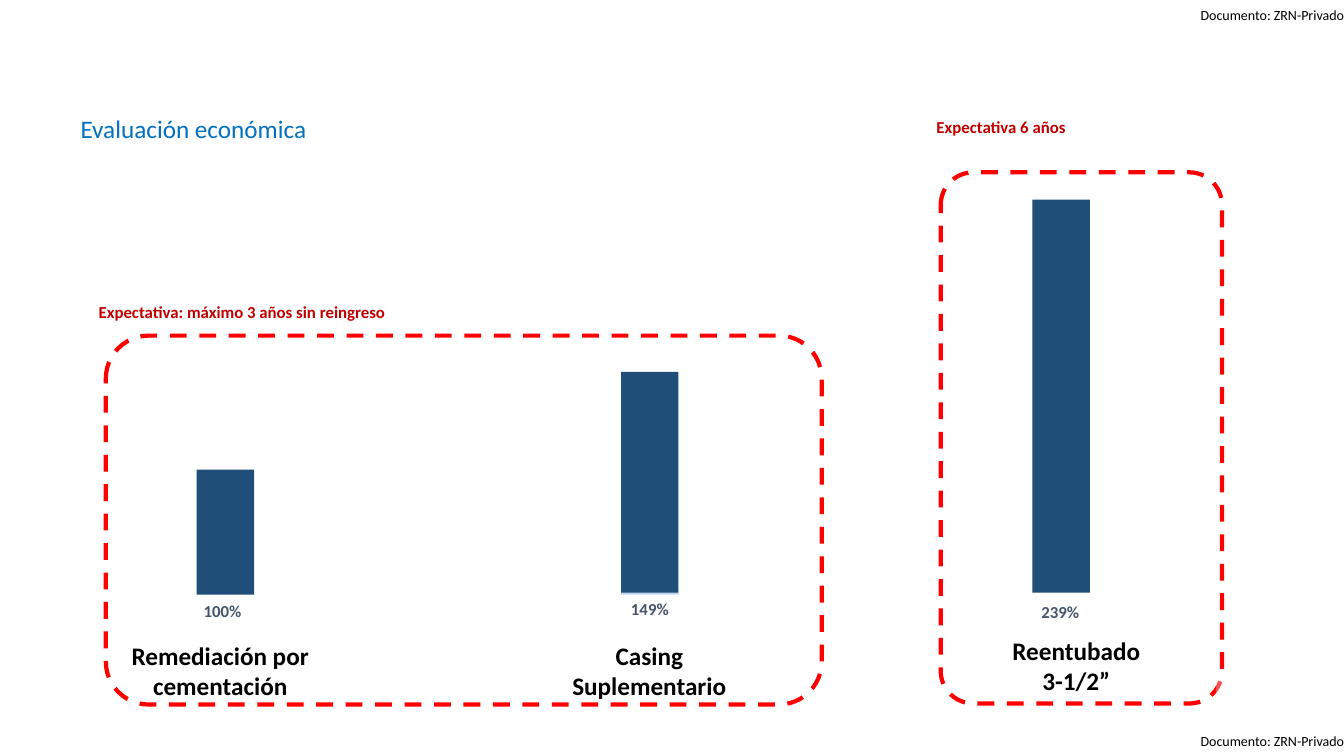
from dataclasses import dataclass

from lxml import etree
from pptx import Presentation
from pptx import util as u
from pptx.dml.color import RGBColor
from pptx.enum import dml, shapes, text
from pptx.oxml import ns

PX = 9144  # 100 px to the inch


@dataclass(frozen=True)
class Theme:
    font: str = "Calibri"
    marking_size: int = 10
    note_size: int = 12
    heading_size: int = 18
    ink: str = "000000"
    title: str = "0070C0"
    value: str = "44546A"
    note: str = "C00000"
    bar: str = "1F4E79"
    bar_base: str = "BDD7EE"
    frame: str = "FF0000"
    paper: str = "FFFFFF"


@dataclass(frozen=True)
class Area:
    left: int
    top: int
    width: int
    height: int

    def emu(self) -> list[int]:
        return [n * PX for n in (self.left, self.top, self.width, self.height)]


@dataclass(frozen=True)
class Label:
    area: Area
    lines: tuple[str, ...]
    size: int
    colour: str
    bold: bool = True
    align: text.PP_ALIGN = text.PP_ALIGN.LEFT
    wrap: bool = False
    spacing: float = 1.0
    inset: bool = True
    anchor: text.MSO_ANCHOR = text.MSO_ANCHOR.TOP


@dataclass(frozen=True)
class Option:
    """One alternative: its bar, its percentage and its name."""
    bar: Area
    percent: str
    percent_at: Area
    name: tuple[str, ...]
    name_at: Area


@dataclass(frozen=True)
class Expectation:
    """A dashed frame around options, with the note above it."""
    frame: Area
    note: str
    note_at: Area


THEME = Theme()
BAR_WIDTH = 57
MARKING = "Documento: ZRN-Privado"

OPTIONS = [
    Option(Area(195, 466, BAR_WIDTH, 124), "100%", Area(192, 591, 58, 30),
           ("Remediación por", "cementación"), Area(120, 630, 197, 71)),
    Option(Area(616, 369, BAR_WIDTH, 219), "149%", Area(616, 589, 58, 30),
           ("Casing", "Suplementario"), Area(557, 630, 174, 71)),
    Option(Area(1024, 198, BAR_WIDTH, 390), "239%", Area(1023, 592, 58, 30),
           ("Reentubado", "3-1/2”"), Area(990, 625, 155, 71)),
]
EXPECTATIONS = [
    Expectation(Area(105, 333, 710, 366), "Expectativa: máximo 3 años sin reingreso",
                Area(88, 294, 308, 30)),
    Expectation(Area(933, 171, 279, 527), "Expectativa 6 años",
                Area(919, 111, 150, 50)),
]


def add_label(page, label: Label) -> None:
    box = page.shapes.add_textbox(*label.area.emu())
    frame = box.text_frame
    frame.word_wrap = label.wrap
    frame.vertical_anchor = label.anchor
    if not label.inset:
        frame.margin_left = frame.margin_right = 0
        frame.margin_top = frame.margin_bottom = 0
    for index, line in enumerate(label.lines):
        para = frame.add_paragraph() if index else frame.paragraphs[0]
        para.alignment = label.align
        para.line_spacing = label.spacing
        span = para.add_run()
        span.text = line
        span.font.name = THEME.font
        span.font.size = u.Pt(label.size)
        span.font.bold = label.bold
        span.font.color.rgb = RGBColor.from_string(label.colour)


def add_block(page, area: Area, colour: str, opacity: int = 100) -> None:
    """Draw a filled rectangle; opacity is a percentage."""
    block = page.shapes.add_shape(shapes.MSO_SHAPE.RECTANGLE, *area.emu())
    block.shadow.inherit = False
    block.line.fill.background()
    block.fill.solid()
    block.fill.fore_color.rgb = RGBColor.from_string(colour)
    if opacity < 100:
        fill = block.fill._xPr.find(ns.qn("a:solidFill"))
        etree.SubElement(fill[0], ns.qn("a:alpha"), val=str(opacity * 1000))


def add_dashed_frame(page, area: Area) -> None:
    outline = page.shapes.add_shape(shapes.MSO_SHAPE.ROUNDED_RECTANGLE, *area.emu())
    outline.adjustments[0] = 0.116
    outline.shadow.inherit = False
    outline.fill.background()
    outline.line.color.rgb = RGBColor.from_string(THEME.frame)
    outline.line.width = u.Pt(3)
    outline.line.dash_style = dml.MSO_LINE.DASH


def add_option(page, option: Option) -> None:
    add_label(page, Label(option.name_at, option.name, THEME.heading_size, THEME.ink,
                          align=text.PP_ALIGN.CENTER))
    add_label(page, Label(option.percent_at, (option.percent,), THEME.note_size, THEME.value))
    add_block(page, option.bar, THEME.bar)


def add_expectation(page, expectation: Expectation) -> None:
    add_dashed_frame(page, expectation.frame)
    add_label(page, Label(expectation.note_at, (expectation.note,),
                          THEME.note_size, THEME.note))


def main() -> None:
    deck = Presentation()
    deck.slide_width, deck.slide_height = 1333 * PX, 750 * PX
    page = deck.slides.add_slide(deck.slide_layouts[6])

    for top in (0, 721):
        add_label(page, Label(Area(1160, top, 173, 29), (MARKING,), THEME.marking_size,
                              THEME.ink, bold=False, align=text.PP_ALIGN.RIGHT, wrap=True,
                              inset=False, anchor=text.MSO_ANCHOR.MIDDLE))
    add_label(page, Label(Area(70, 111, 319, 46), ("Evaluación económica",),
                          THEME.heading_size, THEME.title, bold=False, wrap=True, spacing=0.9))

    add_block(page, Area(616, 584, BAR_WIDTH, 6), THEME.bar_base)
    for option in OPTIONS:
        add_option(page, option)
    for expectation in EXPECTATIONS:
        add_expectation(page, expectation)
    add_block(page, Area(1206, 675, 24, 18), THEME.paper, opacity=30)

    deck.save("out.pptx")


if __name__ == "__main__":
    main()
